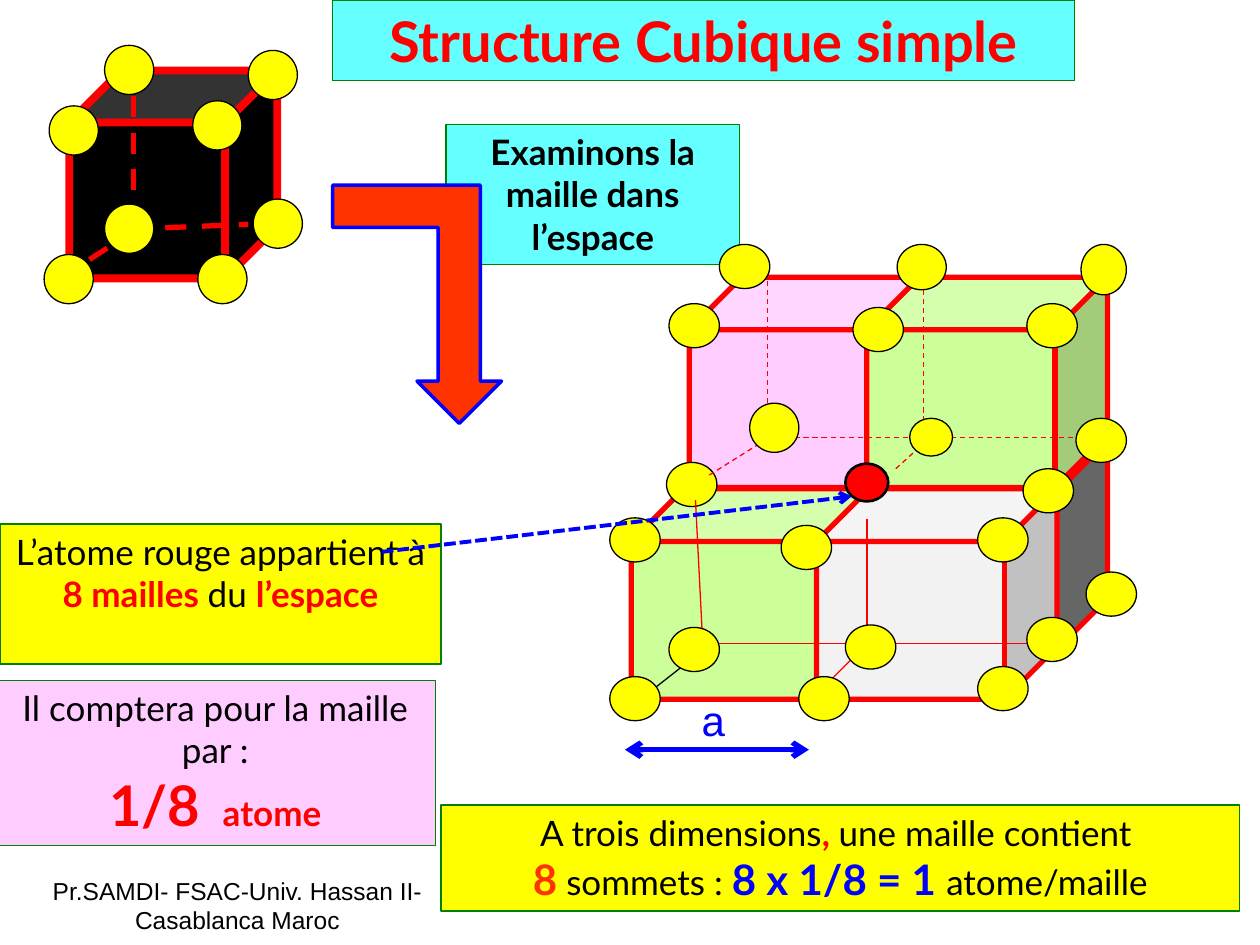
"""Build the slide on the simple cubic structure and its shared atoms."""
from dataclasses import dataclass
from typing import NamedTuple, Optional

from lxml.etree import SubElement as Sub
from pptx import Presentation
from pptx.dml.color import RGBColor as Rgb
from pptx.enum.dml import MSO_LINE as Dash
from pptx.enum.shapes import MSO_CONNECTOR as Link, MSO_SHAPE as Form
from pptx.enum.text import MSO_ANCHOR as Anchor, PP_ALIGN as Align
from pptx.oxml.ns import qn
from pptx.util import Inches, Pt

RED = Rgb(0xFF, 0x00, 0x00)
ORANGE = Rgb(0xFF, 0x33, 0x00)
YELLOW = Rgb(0xFF, 0xFF, 0x00)
BLUE = Rgb(0x00, 0x00, 0xFF)
CYAN = Rgb(0x66, 0xFF, 0xFF)
PINK = Rgb(0xFF, 0xCC, 0xFF)
LIME = Rgb(0xCC, 0xFF, 0x99)
GREEN = Rgb(0x00, 0x80, 0x00)
GREY = Rgb(0x80, 0x80, 0x80)
PALE = Rgb(0xF2, 0xF2, 0xF2)
BLACK = Rgb(0x00, 0x00, 0x00)
WHITE = Rgb(0xFF, 0xFF, 0xFF)


class Run(NamedTuple):
    text: str
    size: float = 20
    color: Rgb = BLACK
    bold: bool = False
    face: str = "Lato"


class Solid(NamedTuple):
    left: float
    top: float
    width: float
    height: float
    fill: Rgb
    edge: Optional[Rgb] = BLACK
    weight: float = 0.75
    form: Form = Form.OVAL


@dataclass
class Edge:
    start: tuple
    end: tuple
    color: Rgb = RED
    weight: float = 0.75
    dash: Optional[Dash] = None
    tips: tuple = ()


@dataclass
class Panel:
    frame: tuple
    fill: Rgb
    paras: list
    wrap: bool = True
    edge: Optional[Rgb] = GREEN


def draw_solid(slide, item: Solid):
    box = map(Inches, item[:4])
    shape = slide.shapes.add_shape(item.form, *box)
    shape.shadow.inherit = False
    shape.fill.solid()
    shape.fill.fore_color.rgb = item.fill
    if item.edge is None:
        shape.line.fill.background()
    else:
        shape.line.color.rgb = item.edge
        shape.line.width = Pt(item.weight)
    return shape


def draw_edge(slide, item: Edge) -> None:
    ends = map(Inches, item.start + item.end)
    link = slide.shapes.add_connector(Link.STRAIGHT, *ends)
    link.line.color.rgb = item.color
    link.line.width = Pt(item.weight)
    if item.dash:
        link.line.dash_style = item.dash
    props = link._element.spPr
    for tip in item.tips:
        Sub(props.find(qn("a:ln")), qn(f"a:{tip}"), type="arrow")
    Sub(props, qn("a:effectLst"))


def write(frame, paras: list, wrap: bool = True, align=Align.CENTER) -> None:
    frame.word_wrap = wrap
    frame.vertical_anchor = Anchor.TOP
    for i, runs in enumerate(paras):
        para = frame.paragraphs[0] if i == 0 else frame.add_paragraph()
        para.alignment = align
        for run in runs:
            if run.text == "\n":
                para.add_line_break()
                continue
            part = para.add_run()
            part.text = run.text
            look = {"size": Pt(run.size), "name": run.face, "bold": run.bold}
            for key, value in look.items():
                setattr(part.font, key, value)
            part.font.color.rgb = run.color


def draw_panel(slide, item: Panel):
    shape = draw_solid(slide, Solid(*item.frame, item.fill, item.edge, form=Form.RECTANGLE))
    write(shape.text_frame, item.paras, item.wrap)
    return shape


def draw_balls(slide, spots: list, width: float = 0.4, height: float = 0.35) -> None:
    for left, top in spots:
        draw_solid(slide, Solid(left, top, width, height, YELLOW))


def draw_cell(slide) -> None:
    draw_solid(slide, Solid(0.55, 0.56, 1.65, 1.65, BLACK, RED, 4.5, Form.CUBE))
    spots = [(0.39, 0.84), (0.83, 0.36), (1.97, 0.4), (1.53, 0.8),
             (0.35, 2.02), (1.57, 2.02), (2.01, 1.58)]
    draw_balls(slide, spots, 0.39, 0.39)
    for start, end in [((1.06, 0.76), (1.06, 1.86)), ((0.71, 2.06), (1.02, 1.86)),
                       ((1.02, 1.82), (1.97, 1.78))]:
        draw_edge(slide, Edge(start, end, weight=3, dash=Dash.DASH))
    draw_balls(slide, [(0.83, 1.62)], 0.39, 0.39)


def draw_space(slide) -> None:
    label = draw_panel(slide, Panel((5.47, 5.64, 0.39, 0.3), WHITE,
                                    [[Run("a", 24, BLUE, face="Arial")]], edge=None))
    para = label.text_frame.paragraphs[0]
    for key, value in {"alignment": Align.LEFT, "line_spacing": 0.5,
                       "space_before": Pt(12)}.items():
        setattr(para, key, value)
    draw_edge(slide, Edge((4.96, 5.95), (6.42, 5.95), BLUE, 3, tips=("headEnd", "tailEnd")))

    for left, top, fill in [(5.01, 3.88, LIME), (5.47, 2.2, PINK), (6.88, 3.5, GREY),
                            (6.48, 3.88, PALE), (6.88, 2.2, LIME)]:
        draw_solid(slide, Solid(left, top, 1.91, 1.67, fill, RED, 3, Form.CUBE))
    draw_solid(slide, Solid(6.71, 3.68, 0.34, 0.3, RED, weight=1.5))
    draw_balls(slide, [(6.77, 2.44), (5.29, 3.67), (8.12, 3.72), (6.2, 4.17)])

    for start, end, color in [
            ((6.88, 4.12), (6.88, 5.11), RED), ((6.43, 5.56), (6.88, 5.11), RED),
            ((6.94, 5.11), (8.35, 5.11), RED), ((5.52, 3.97), (5.58, 5.16), RED),
            ((5.07, 5.56), (5.58, 5.16), BLACK), ((5.58, 5.11), (6.82, 5.11), RED)]:
        draw_edge(slide, Edge(start, end, color))
    for start, end in [
            ((7.33, 2.23), (7.33, 3.52)), ((7.11, 3.72), (7.33, 3.52)),
            ((7.33, 3.47), (8.69, 3.47)), ((6.09, 2.23), (6.09, 3.52)),
            ((5.63, 3.77), (6.03, 3.52)), ((6.09, 3.47), (7.44, 3.47))]:
        draw_edge(slide, Edge(start, end, dash=Dash.DASH))

    for spot, size in [((7.22, 3.32), (0.34, 0.3)), ((5.95, 3.2), (0.39, 0.39)),
                       ((8.58, 1.94), (0.36, 0.4)), ((7.12, 1.94), (0.39, 0.36))]:
        draw_balls(slide, [spot], *size)
    draw_balls(slide, [
        (6.71, 4.96), (8.15, 4.9), (7.76, 5.29), (8.62, 4.54), (5.31, 4.98),
        (4.84, 5.37), (5.31, 2.41), (5.71, 1.94), (8.15, 2.41), (8.54, 3.32),
        (7.76, 4.11), (4.84, 4.11), (6.34, 5.37)])


def main() -> None:
    deck = Presentation()
    deck.slide_width, deck.slide_height = Inches(10), Inches(7.5)
    slide = deck.slides.add_slide(deck.slide_layouts[6])
    draw_cell(slide)

    for panel in [
            Panel((2.64, 0, 5.89, 0.64), CYAN,
                  [[Run("Structure Cubique simple", 32, RED, True)]], wrap=False),
            Panel((3.54, 0.99, 2.33, 1.11), CYAN,
                  [[Run("Examinons la maille dans l’espace", bold=True)]]),
            Panel((0, 4.16, 3.5, 1.11), YELLOW,
                  [[Run("L’atome rouge appartient à "), Run("8 mailles ", 20, RED, True),
                    Run("du "), Run("l’espace", 20, RED, True)]]),
            Panel((-0.04, 5.4, 3.5, 1.31), PINK,
                  [[Run("Il comptera pour la maille par :")],
                   [Run("1/8 ", 32, RED, True), Run(" atome", 20, RED, True)]]),
            Panel((3.5, 6.39, 6.34, 0.84), YELLOW,
                  [[Run("A trois dimensions"), Run(", ", 20, RED, True),
                    Run("une maille contient "), Run("\n"), Run("8", 24, ORANGE, True),
                    Run(" sommets : "), Run("8 x 1/8 = 1 ", 24, BLUE, True),
                    Run("atome/maille")]])]:
        draw_panel(slide, panel)

    arrow = draw_solid(slide, Solid(2.64, 1.47, 1.34, 1.89, ORANGE, BLUE, 2, Form.BENT_UP_ARROW))
    arrow._element.spPr.xfrm.set("flipV", "1")
    draw_space(slide)
    draw_edge(slide, Edge((3.03, 4.38), (6.76, 3.94), BLUE, 2.25, Dash.SQUARE_DOT, ("tailEnd",)))

    foot = slide.shapes.add_textbox(*map(Inches, (0.3, 6.9, 3.17, 0.52)))
    write(foot.text_frame, [[Run("Pr.SAMDI- FSAC-Univ. Hassan II- Casablanca Maroc", 14, face="Arial")]])
    deck.save("out.pptx")


if __name__ == "__main__":
    main()
